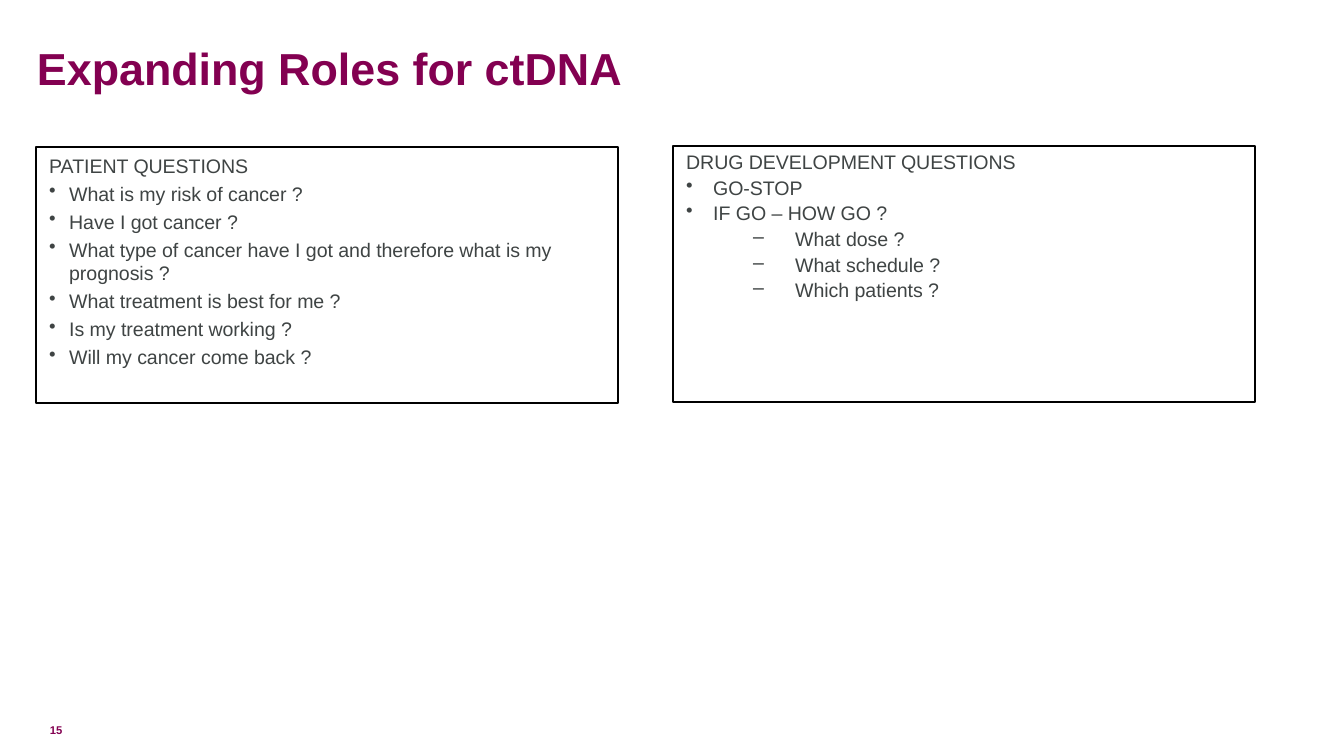
from dataclasses import dataclass

import pptx
import pptx.dml.color
import pptx.enum.shapes
import pptx.enum.text
import pptx.oxml
import pptx.oxml.ns
import pptx.util

PX = 914400 / 134.4
PLUM = pptx.dml.color.RGBColor(0x83, 0x00, 0x51)
GREY = pptx.dml.color.RGBColor(0x3F, 0x44, 0x44)
BLACK = pptx.dml.color.RGBColor(0x00, 0x00, 0x00)
FONT = "Arial"


@dataclass(frozen=True)
class Item:
    text: str
    bullet: str = ""
    margin: int = 0
    hanging: int = 0
    level: int = 0


@dataclass(frozen=True)
class Panel:
    left: int
    top: int
    items: tuple[Item, ...]
    line_spacing: float


PANEL_WIDTH, PANEL_HEIGHT = 582, 256

PANELS = (
    Panel(36, 147, (
        Item("PATIENT QUESTIONS"),
        *(Item(text, "•", 20, 20) for text in (
            "What is my risk of cancer ?",
            "Have I got cancer ?",
            "What type of cancer have I got and therefore what is my prognosis ?",
            "What treatment is best for me ?",
            "Is my treatment working ?",
            "Will my cancer come back ?",
        )),
    ), 1.0),
    Panel(673, 146, (
        Item("DRUG DEVELOPMENT QUESTIONS"),
        *(Item(text, "•", 27, 27) for text in ("GO-STOP", "IF GO – HOW GO ?")),
        *(Item(text, "–", 109, 42, 1) for text in (
            "What dose ?", "What schedule ?", "Which patients ?",
        )),
    ), 0.9),
)


def emu(pixels: int) -> int:
    return round(pixels * PX)


def write(para, text: str, *, size: float, color, bold: bool = False) -> None:
    span = para.add_run()
    span.text = text
    span.font.name = FONT
    span.font.size = pptx.util.Pt(size)
    span.font.bold = bold
    span.font.color.rgb = color


def set_bullet(para, item: Item) -> None:
    properties = para._p.get_or_add_pPr()
    properties.set("marL", str(emu(item.margin)))
    properties.set("indent", str(-emu(item.hanging)))
    bullet = pptx.oxml.parse_xml(
        f'<a:buChar {pptx.oxml.ns.nsdecls("a")} char="{item.bullet}"/>'
    )
    properties.append(bullet)


def add_label(page, left: int, top: int, width: int, height: int, text: str, *,
              size: float, inset_left: int = 0, inset_top: int = 0) -> None:
    box = page.shapes.add_textbox(emu(left), emu(top), emu(width), emu(height))
    frame = box.text_frame
    frame.word_wrap = True
    frame.margin_left = frame.margin_right = emu(inset_left)
    frame.margin_top = emu(inset_top)
    frame.margin_bottom = 0
    write(frame.paragraphs[0], text, size=size, color=PLUM, bold=True)


def add_panel(page, panel: Panel) -> None:
    box = page.shapes.add_shape(
        pptx.enum.shapes.MSO_SHAPE.RECTANGLE,
        emu(panel.left), emu(panel.top), emu(PANEL_WIDTH), emu(PANEL_HEIGHT),
    )
    box.shadow.inherit = False
    box.fill.background()
    box.line.color.rgb = BLACK
    box.line.width = pptx.util.Pt(0.75)
    frame = box.text_frame
    frame.word_wrap = True
    frame.vertical_anchor = pptx.enum.text.MSO_ANCHOR.TOP
    for index, item in enumerate(panel.items):
        para = frame.add_paragraph() if index else frame.paragraphs[0]
        para.alignment = pptx.enum.text.PP_ALIGN.LEFT
        para.level = item.level
        para.line_spacing = panel.line_spacing
        if index:
            para.space_before = pptx.util.Pt(2.4)
        if item.bullet:
            set_bullet(para, item)
        write(para, item.text, size=10.5, color=GREY)


def main() -> None:
    deck = pptx.Presentation()
    deck.slide_width, deck.slide_height = emu(1344), emu(756)
    page = deck.slides.add_slide(deck.slide_layouts[6])
    add_label(page, 50, 723, 58, 20, "15", size=6)
    add_label(page, 24, 31, 1297, 56, "Expanding Roles for ctDNA",
              size=24, inset_left=13, inset_top=10)
    for panel in PANELS:
        add_panel(page, panel)
    deck.save("out.pptx")


if __name__ == "__main__":
    main()
